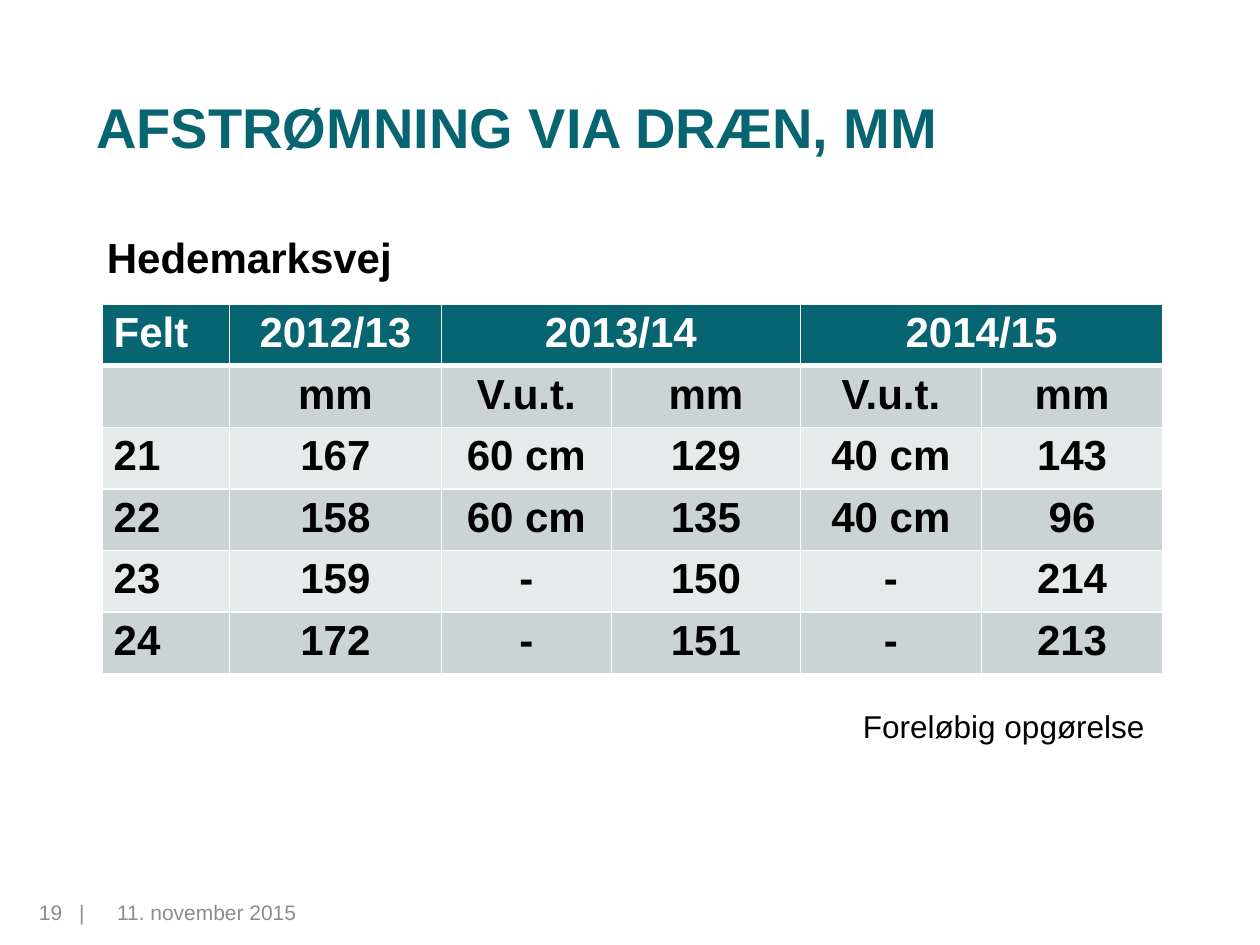
import pptx
import pptx.util
import pptx.dml.color
import pptx.enum.text
import pptx.oxml
import pptx.oxml.ns

Pt = pptx.util.Pt
RGB = pptx.dml.color.RGBColor
ALIGN = pptx.enum.text.PP_ALIGN
ANCHOR = pptx.enum.text.MSO_ANCHOR

TEAL = RGB(0x07, 0x64, 0x71)
DARK = RGB(0xCC, 0xD3, 0xD5)
LIGHT = RGB(0xE7, 0xEA, 0xEB)
GRAY = RGB(0x8C, 0x8C, 0x8C)
BLACK = RGB(0, 0, 0)
WHITE = RGB(0xFF, 0xFF, 0xFF)

COLS = [72.7, 121, 97.2, 108, 103.5, 103.5]
ROWS = [
    ["Felt", "2012/13", "2013/14", "", "2014/15", ""],
    ["", "mm", "V.u.t.", "mm", "V.u.t.", "mm"],
    ["21", "167", "60 cm", "129", "40 cm", "143"],
    ["22", "158", "60 cm", "135", "40 cm", "96"],
    ["23", "159", "-", "150", "-", "214"],
    ["24", "172", "-", "151", "-", "213"],
]


def style(para, size, color, bold=False):
    font = para.font
    font.name, font.size, font.bold = "Arial", Pt(size), bold
    font.color.rgb = color


def add_text(slide, box, text, size, color, bold=False, wrap=True):
    shape = slide.shapes.add_textbox(*[Pt(n) for n in box])
    frame = shape.text_frame
    frame.word_wrap = wrap
    para = frame.paragraphs[0]
    para.text = text
    style(para, size, color, bold)
    return frame


def add_title(slide, box):
    frame = add_text(slide, box, "AFSTRØMNING VIA DRÆN, MM", 32, TEAL, True)
    frame.vertical_anchor = ANCHOR.MIDDLE


def add_lines(cell, base):
    """White cell borders, with the given width at the base."""
    props = cell._tc.get_or_add_tcPr()
    for side, width in (("L", 1), ("R", 1), ("T", 1), ("B", base)):
        props.append(pptx.oxml.parse_xml(
            f'<a:ln{side} {pptx.oxml.ns.nsdecls("a")} w="{Pt(width)}">'
            f'<a:solidFill><a:srgbClr val="{WHITE}"/></a:solidFill>'
            f'</a:ln{side}>'))


def add_grid(slide, box):
    frame = slide.shapes.add_table(
        len(ROWS), len(COLS), *[Pt(n) for n in box])
    table = frame.table
    for col, width in zip(table.columns, COLS):
        col.width = Pt(width)
    for r, row in enumerate(ROWS):
        table.rows[r].height = Pt(box[3] / len(ROWS))
        for c, text in enumerate(row):
            cell = table.cell(r, c)
            cell.margin_left = cell.margin_right = Pt(6.5)
            cell.margin_top = cell.margin_bottom = Pt(3.2)
            add_lines(cell, 3 if r == 0 else 1)
            cell.fill.solid()
            cell.fill.fore_color.rgb = (
                TEAL if r == 0 else DARK if r % 2 else LIGHT)
            para = cell.text_frame.paragraphs[0]
            para.text = text
            para.alignment = ALIGN.CENTER if c else ALIGN.LEFT
            style(para, 24, BLACK if r else WHITE, True)
    # Each of the later years spans two columns
    for c in (2, 4):
        table.cell(0, c).merge(table.cell(0, c + 1))


def add_footer(slide, box):
    left, top, width, height = box
    # Page number, with a tab before the bar
    frame = add_text(slide, (left, top, 56, height), "", 12, GRAY)
    frame.margin_left = Pt(22.3)
    frame.margin_right = 0
    para = frame.paragraphs[0]
    para.text = "19\t|"
    props = para._p.get_or_add_pPr()
    props.insert(0, pptx.oxml.parse_xml(
        f'<a:tabLst {pptx.oxml.ns.nsdecls("a")}>'
        f'<a:tab pos="{Pt(23)}" algn="l"/></a:tabLst>'))
    # Date
    add_text(slide, (left + 59.8, top, width - 59.8, height),
             "11. november 2015", 12, GRAY)


def main():
    deck = pptx.Presentation()
    deck.slide_width, deck.slide_height = Pt(720), Pt(540)
    slide = deck.slides.add_slide(deck.slide_layouts[6])
    add_title(slide, (48, 27, 636, 90))
    add_grid(slide, (58.5, 173.8, sum(COLS), 204))
    add_footer(slide, (0, 510.5, 227.5, 29))
    # Place name above and note below the table
    add_text(slide, (54, 129, 179, 36), "Hedemarksvej", 24, BLACK, True, False)
    add_text(slide, (486, 400.3, 177, 29), "Foreløbig opgørelse", 18, BLACK,
             wrap=False)
    deck.save("out.pptx")


if __name__ == "__main__":
    main()
